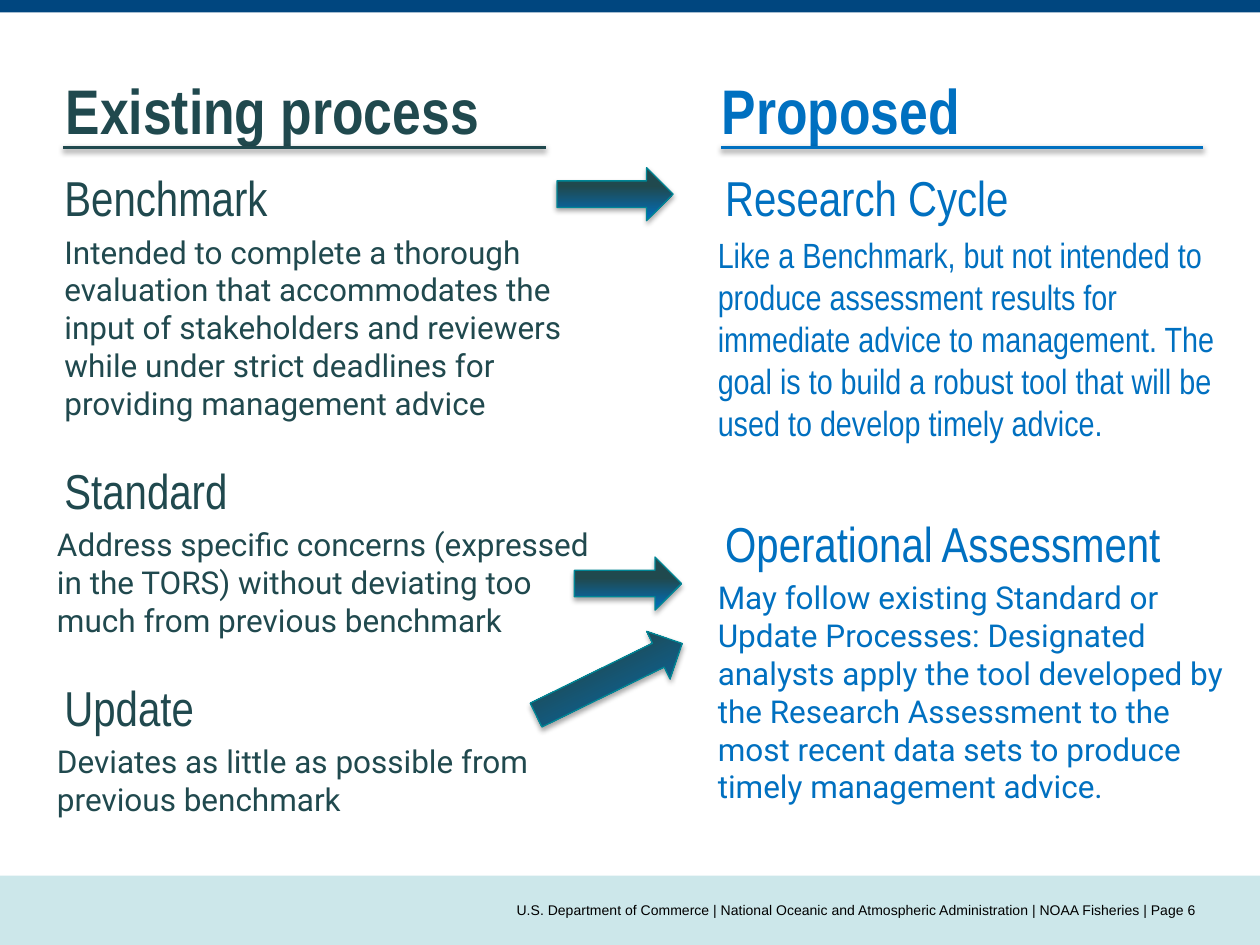
from lxml.etree import SubElement
from pptx import Presentation
from pptx.dml.color import RGBColor
from pptx.enum.shapes import MSO_CONNECTOR, MSO_SHAPE
from pptx.enum.text import MSO_ANCHOR, PP_ALIGN
from pptx.oxml.ns import qn
from pptx.util import Cm, Pt

DARK, BLUE = "20494E", "0070C0"
NARROW, ROBOTO = "Arial Narrow", "Roboto"


def rgb(value):
    """Turn a hex string into a colour."""
    return RGBColor.from_string(value)


def set_font(font, name, size, color, bold=False):
    """Set the name, size, colour and weight of a font."""
    font.name, font.size, font.bold = name, Pt(size), bold
    font.color.rgb = rgb(color)


def add_shadow(sp, alpha, dist):
    """Give a shape or connector a soft shadow straight below it."""
    effects = SubElement(sp._element.spPr, qn("a:effectLst"))
    shadow = SubElement(effects, qn("a:outerShdw"), blurRad=str(Pt(3.1)), dist=str(Pt(dist)),
                        dir="5400000", rotWithShape="0")
    color = SubElement(shadow, qn("a:srgbClr"), val="000000")
    SubElement(color, qn("a:alpha"), val=str(alpha * 1000))


def add_band(slide, top, height, color):
    """Add a full-width band of one colour."""
    sp = slide.shapes.add_shape(MSO_SHAPE.RECTANGLE, 0, Cm(top), Cm(25.4), Cm(height))
    sp.shadow.inherit = False
    sp.fill.solid()
    sp.fill.fore_color.rgb = rgb(color)
    sp.line.fill.background()


def add_footer(slide, left, top, width, height):
    """Add the right-aligned footer line."""
    tf = slide.shapes.add_textbox(Cm(left), Cm(top), Cm(width), Cm(height)).text_frame
    tf.word_wrap = True
    tf.vertical_anchor = MSO_ANCHOR.MIDDLE
    tf.margin_left = tf.margin_right = 0
    p = tf.paragraphs[0]
    p.text = ("U.S. Department of Commerce | National Oceanic and Atmospheric Administration"
              " | NOAA Fisheries | Page 6")
    p.alignment = PP_ALIGN.RIGHT
    set_font(p.font, "Arial", 8, "000000")


def add_title(slide, left, top, width, height, tab):
    """Set both column headings in the title, the second one at a tab stop."""
    sp = slide.shapes.title
    sp.left, sp.top, sp.width, sp.height = Cm(left), Cm(top), Cm(width), Cm(height)
    tf = sp.text_frame
    tf.vertical_anchor = MSO_ANCHOR.MIDDLE
    p = tf.paragraphs[0]
    p.alignment = PP_ALIGN.LEFT
    tabs = SubElement(p._p.get_or_add_pPr(), qn("a:tabLst"))
    SubElement(tabs, qn("a:tab"), pos=str(Cm(tab)), algn="l")
    for text, color in (("Existing process\t", DARK), ("Proposed", BLUE)):
        r = p.add_run()
        r.text = text
        set_font(r.font, NARROW, 36, color, True)


def add_rule(slide, left, top, width, color):
    """Add the line under a column heading."""
    line = slide.shapes.add_connector(MSO_CONNECTOR.STRAIGHT, Cm(left), Cm(top),
                                      Cm(left + width), Cm(top))
    line.line.color.rgb = rgb(color)
    line.line.width = Pt(2)
    add_shadow(line, 38, 1.6)


def add_column(slide, left, top, width, height, color, gap, rows):
    """Add a column of headings and descriptions, with a gap above later headings."""
    tf = slide.shapes.add_textbox(Cm(left), Cm(top), Cm(width), Cm(height)).text_frame
    tf.word_wrap = True
    for i, (text, font, size, indent) in enumerate(rows):
        p = tf.add_paragraph() if i else tf.paragraphs[0]
        p.text = text
        p._p.get_or_add_pPr().set("marL", str(Cm(indent)))
        if i:
            p.space_before = Pt(gap if size == 28 else size * 0.2)
        set_font(p.font, font, size, color)


def add_arrow(slide, left, top, width, dark_stop, rotation=0):
    """Add a block arrow shaded from blue at the bottom to dark at the top."""
    sp = slide.shapes.add_shape(MSO_SHAPE.RIGHT_ARROW, Cm(left), Cm(top), Cm(width), Cm(1.07))
    sp.rotation = rotation
    sp.fill.gradient()
    sp.fill.gradient_angle = 90
    for stop, color, position in zip(sp.fill.gradient_stops, (BLUE, DARK), (0.01, dark_stop)):
        stop.color.rgb = rgb(color)
        stop.position = position
    sp.line.color.rgb = rgb("008695")
    sp.line.width = Pt(0.75)
    add_shadow(sp, 35, 1.8)


def main():
    """Build the slide and save it."""
    prs = Presentation()
    prs.slide_width, prs.slide_height = Cm(25.4), Cm(19.05)
    slide = prs.slides.add_slide(prs.slide_layouts[5])
    add_band(slide, 17.65, 1.4, "CCE7EA")
    add_band(slide, 0, 0.25, "00467F")
    add_title(slide, 1.07, 1.27, 23.06, 1.88, 13.23)
    add_footer(slide, 6.35, 17.65, 17.78, 1.4)
    add_column(slide, 0.9, 3.25, 11.4, 12.57, DARK, 22, [
        ("Benchmark", NARROW, 28, 0.15),
        ("Intended to complete a thorough evaluation that accommodates the input of "
         "stakeholders and reviewers while under strict deadlines for providing "
         "management advice", ROBOTO, 18, 0.15),
        ("Standard", NARROW, 28, 0.15),
        ("Address specific concerns (expressed in the TORS) without deviating too much "
         "from previous benchmark", ROBOTO, 18, 0),
        ("Update", NARROW, 28, 0.15),
        ("Deviates as little as possible from previous benchmark", ROBOTO, 18, 0)])
    add_column(slide, 14.22, 3.25, 10.75, 12.57, BLUE, 40, [
        ("Research Cycle", NARROW, 28, 0.15),
        ("Like a Benchmark, but not intended to produce assessment results for immediate "
         "advice to management. The goal is to build a robust tool that will be used to "
         "develop timely advice.", NARROW, 20, 0),
        ("Operational Assessment", NARROW, 28, 0.15),
        ("May follow existing Standard or Update Processes: Designated analysts apply the "
         "tool developed by the Research Assessment to the most recent data sets to "
         "produce timely management advice.", ROBOTO, 18, 0)])
    for left, color in ((1.27, DARK), (14.53, BLUE)):
        add_rule(slide, left, 2.97, 9.73, color)
    add_arrow(slide, 11.23, 3.38, 2.34, 0.65)
    add_arrow(slide, 11.58, 11.23, 2.16, 0.6)
    add_arrow(slide, 10.64, 13.16, 3.28, 0.73, 333.9)
    prs.save("out.pptx")


if __name__ == "__main__":
    main()
